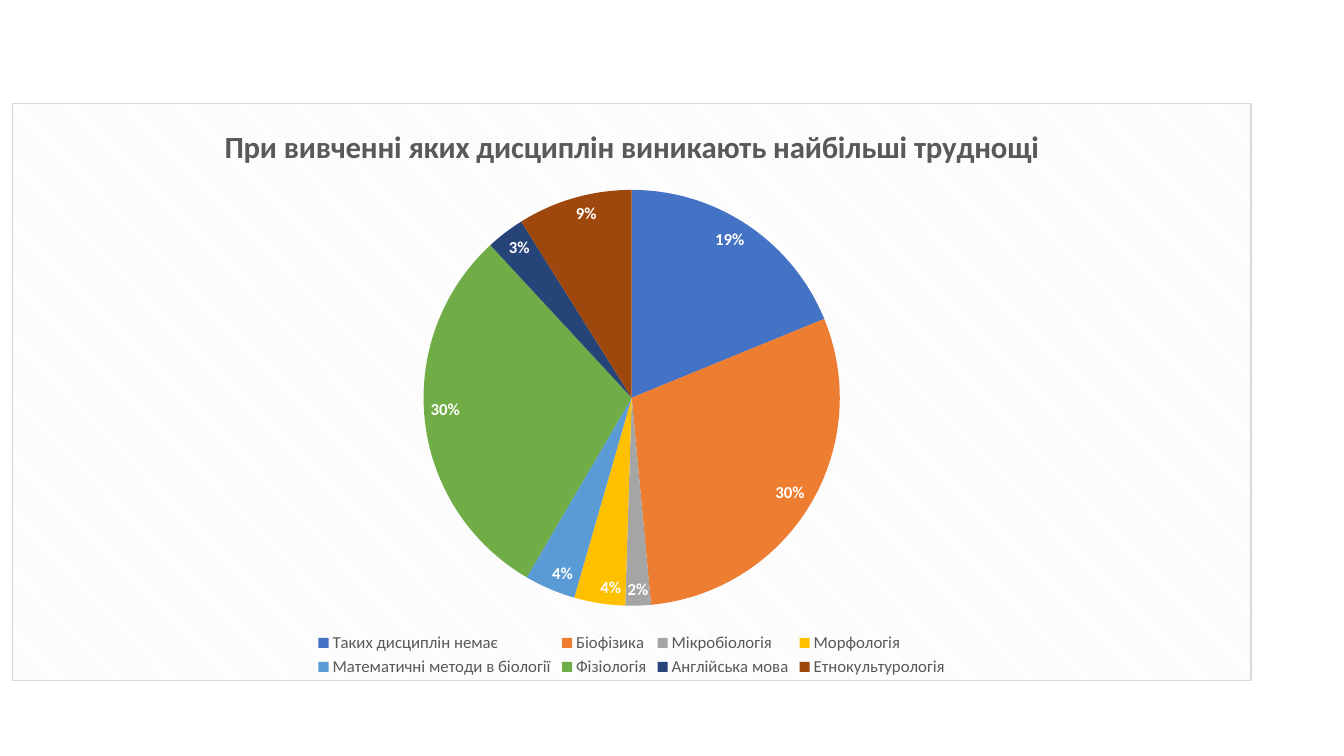
from dataclasses import dataclass

from lxml.etree import fromstring
from pptx import Presentation
from pptx.chart.chart import Chart
from pptx.chart.data import CategoryChartData as Data
from pptx.dml.color import RGBColor as Rgb
from pptx.enum.chart import XL_CHART_TYPE as Kind
from pptx.enum.chart import XL_LABEL_POSITION as Spot
from pptx.enum.chart import XL_LEGEND_POSITION as Side
from pptx.oxml.ns import qn
from pptx.text.text import Font
from pptx.util import Cm, Pt


@dataclass(frozen=True)
class Theme:
    face: str = "Calibri"
    ink: str = "595959"
    light: str = "FFFFFF"
    hatch: str = "F2F2F2"
    edge: str = "D9D9D9"
    head: int = 22
    small: int = 12


@dataclass(frozen=True)
class Slice:
    name: str
    share: int
    color: str


THEME = Theme()
TITLE = "При вивченні яких дисциплін виникають найбільші труднощі"
SLICES = [
    Slice("Таких дисциплін немає", 19, "4472C4"),
    Slice("Біофізика", 30, "ED7D31"),
    Slice("Мікробіологія", 2, "A5A5A5"),
    Slice("Морфологія", 4, "FFC000"),
    Slice("Математичні методи в біології", 4, "5B9BD5"),
    Slice("Фізіологія", 30, "70AD47"),
    Slice("Англійська мова", 3, "264478"),
    Slice("Етнокультурологія", 9, "9E480E"),
]
SPACES = (
    'xmlns:c="http://schemas.openxmlformats.org/drawingml/2006/chart" '
    'xmlns:a="http://schemas.openxmlformats.org/drawingml/2006/main"'
)


def style(font: Font, size: int, color: str, bold: bool = False) -> None:
    font.name = THEME.face
    font.size = Pt(size)
    font.bold = bold
    font.color.rgb = Rgb.from_string(color)


def add_frame(chart: Chart) -> None:
    frame = fromstring(
        f'<c:spPr {SPACES}><a:pattFill prst="dkDnDiag">'
        f'<a:fgClr><a:srgbClr val="{THEME.hatch}"/></a:fgClr>'
        f'<a:bgClr><a:srgbClr val="{THEME.light}"/></a:bgClr></a:pattFill>'
        f'<a:ln w="{Pt(0.75)}"><a:solidFill><a:srgbClr val="{THEME.edge}"/>'
        "</a:solidFill></a:ln></c:spPr>"
    )
    chart.element.find(qn("c:chart")).addnext(frame)


def place_pie(chart: Chart, left: float, top: float, width: float, height: float) -> None:
    sizes = {"x": left, "y": top, "w": width, "h": height}
    modes = "".join(f'<c:{key}Mode val="edge"/>' for key in "xy")
    parts = "".join(f'<c:{key} val="{size}"/>' for key, size in sizes.items())
    area = chart.element.find(qn("c:chart")).find(qn("c:plotArea"))
    for old in area.findall(qn("c:layout")):
        area.remove(old)
    area.insert(0, fromstring(
        f'<c:layout {SPACES}><c:manualLayout><c:layoutTarget val="inner"/>'
        f"{modes}{parts}</c:manualLayout></c:layout>"
    ))


def add_title(chart: Chart) -> None:
    chart.has_title = True
    title = chart.chart_title
    title.include_in_layout = False
    title.text_frame.text = TITLE
    style(title.text_frame.paragraphs[0].runs[0].font, THEME.head, THEME.ink, True)


def add_legend(chart: Chart) -> None:
    chart.has_legend = True
    legend = chart.legend
    legend.position = Side.BOTTOM
    legend.include_in_layout = False
    style(legend.font, THEME.small, THEME.ink)


def paint_pie(chart: Chart) -> None:
    plot = chart.plots[0]
    plot.vary_by_categories = True
    for index, item in enumerate(SLICES):
        fill = plot.series[0].points[index].format.fill
        fill.solid()
        fill.fore_color.rgb = Rgb.from_string(item.color)
    labels = plot.series[0].data_labels
    labels.show_value = False
    labels.show_percentage = True
    labels.number_format = "0%"
    labels.number_format_is_linked = False
    labels.position = Spot.INSIDE_END
    style(labels.font, THEME.small, THEME.light, True)


def main() -> None:
    deck = Presentation()
    deck.slide_width, deck.slide_height = Cm(33.87), Cm(19.05)
    slide = deck.slides.add_slide(deck.slide_layouts[6])
    data = Data()
    data.categories = [item.name for item in SLICES]
    data.add_series(TITLE, [item.share for item in SLICES])
    box = Cm(0.3), Cm(2.59), Cm(31.24), Cm(14.58)
    chart = slide.shapes.add_chart(Kind.PIE, *box, data).chart
    style(chart.font, 10, "000000")
    add_title(chart)
    add_legend(chart)
    paint_pie(chart)
    place_pie(chart, 0.33, 0.15, 0.34, 0.72)
    add_frame(chart)
    deck.save("out.pptx")


if __name__ == "__main__":
    main()
